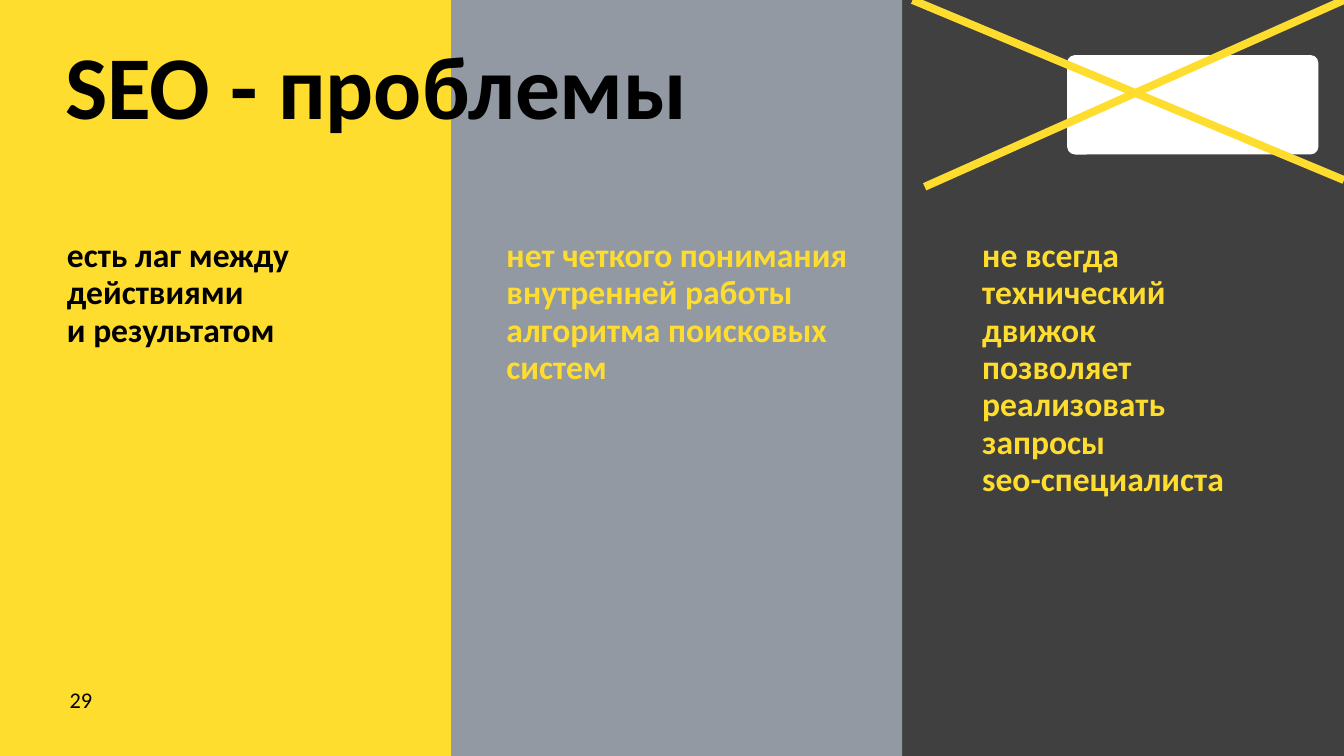
import pptx
import pptx.dml.color
import pptx.enum.shapes
import pptx.enum.text
import pptx.oxml.ns
import pptx.util
import lxml.etree

CELL = pptx.util.Inches(0.1)
COLUMNS, ROWS = 100, 56.25
BAND = 33.56
YELLOW, GREY, DARK, BLACK, WHITE = "FFDD2F", "9299A2", "404040", "000000", "FFFFFF"


def color(code):
    return pptx.dml.color.RGBColor.from_string(code)


def cells(*counts):
    return [pptx.util.Emu(round(count * CELL)) for count in counts]


def write(shape, text, size=18, fill=BLACK, bold=True, spacing=None, middle=False):
    frame = shape.text_frame
    frame.word_wrap = True
    anchors = pptx.enum.text.MSO_ANCHOR
    frame.vertical_anchor = anchors.MIDDLE if middle else anchors.TOP
    para = frame.paragraphs[0]
    para.alignment = pptx.enum.text.PP_ALIGN.LEFT
    if spacing:
        para.line_spacing = pptx.util.Pt(spacing)
    for number, line in enumerate(text.split("\n")):
        if number:
            para.add_line_break()
        span = para.add_run()
        span.text = line
        span.font.name = "Calibri"
        span.font.size = pptx.util.Pt(size)
        span.font.bold = bold
        span.font.color.rgb = color(fill)


class Painter:
    def __init__(self, deck):
        self.slide = deck.slides.add_slide(deck.slide_layouts[5])
        self.shapes = self.slide.shapes

    def title(self, text, left, top, width, height):
        box = self.shapes.title
        box.left, box.top, box.width, box.height = cells(left, top, width, height)
        write(box, text, size=48, middle=True)
        self.shapes._spTree.append(box._element)

    def panel(self, left, top, width, height, fill, corner=0):
        kind = pptx.enum.shapes.MSO_SHAPE.ROUNDED_RECTANGLE
        panel = self.shapes.add_shape(kind, *cells(left, top, width, height))
        panel.adjustments[0] = corner
        panel.shadow.inherit = False
        panel.fill.solid()
        panel.fill.fore_color.rgb = color(fill)
        panel.line.fill.background()

    def text(self, text, left, top, width, height, **style):
        write(self.shapes.add_textbox(*cells(left, top, width, height)), text, **style)

    def line(self, start, end, stroke=YELLOW, weight=4.25):
        straight = pptx.enum.shapes.MSO_CONNECTOR.STRAIGHT
        line = self.shapes.add_connector(straight, *cells(*start, *end))
        line.line.color.rgb = color(stroke)
        line.line.width = pptx.util.Pt(weight)
        properties = line._element.spPr
        lxml.etree.SubElement(properties, pptx.oxml.ns.qn("a:effectLst"))


def main():
    deck = pptx.Presentation()
    deck.slide_width, deck.slide_height = cells(COLUMNS, ROWS)
    painter = Painter(deck)

    for index, fill in reversed(list(enumerate((YELLOW, GREY, DARK)))):
        left = index * BAND
        painter.panel(left, 0, min(BAND, COLUMNS - left), ROWS, fill)

    painter.title("SEO - проблемы", 3.85, 1.5, 90, 9.4)

    problems = (
        ("есть лаг между действиями \nи результатом", 4, 31.8, 9.4, BLACK),
        ("нет четкого понимания внутренней работы алгоритма поисковых систем",
         36.7, 27.5, 12.2, YELLOW),
        ("не всегда технический движок позволяет реализовать запросы \nseo-специалиста",
         72.1, 22.1, 17.8, YELLOW),
    )
    for text, left, width, height, fill in problems:
        painter.text(text, left, 17.13, width, height, fill=fill, spacing=20)

    painter.text("29", 4.2, 50.55, 23.3, 3, size=12, bold=False, middle=True)

    painter.panel(79.4, 4.1, 18.7, 7.4, WHITE, corner=0.08)
    painter.line((67.9, 0), (COLUMNS, 13.4))
    painter.line((68.8, 13.9), (COLUMNS, 0))

    deck.save("out.pptx")


if __name__ == "__main__":
    main()
